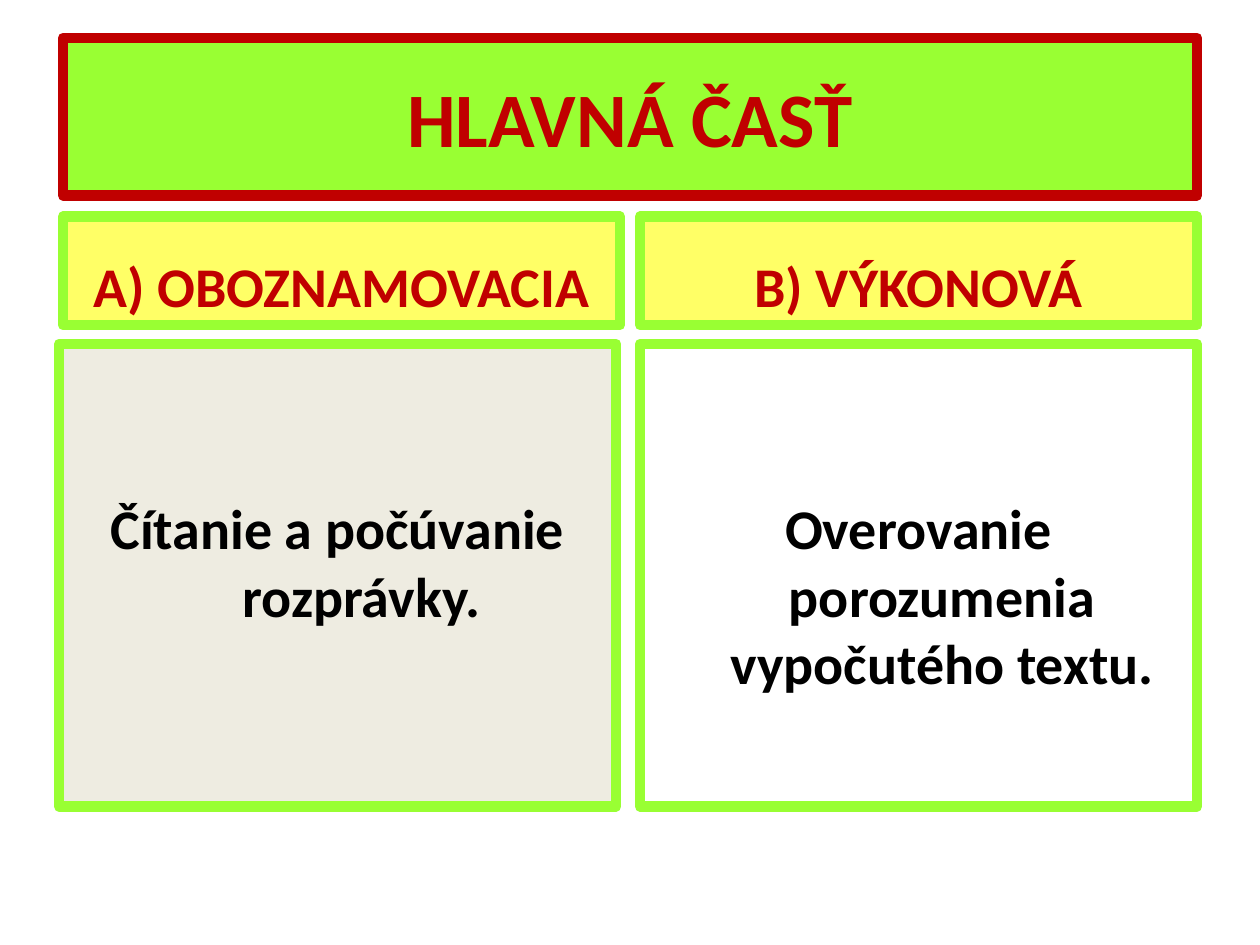
"""Build the two-column comparison slide of the lesson's main part."""
from dataclasses import dataclass

from lxml import etree
from pptx import Presentation
from pptx.dml.color import RGBColor
from pptx.enum import text
from pptx.oxml.ns import qn
from pptx.util import Inches, Pt


@dataclass(frozen=True)
class Theme:
    font: str = "Calibri"
    title_size: int = 44
    text_size: int = 32
    border_width: int = 6
    green: str = "99FF33"
    red: str = "C00000"
    yellow: str = "FFFF66"
    beige: str = "EEECE1"
    white: str = "FFFFFF"
    black: str = "000000"


@dataclass(frozen=True)
class Panel:
    index: int
    wording: str
    left: float
    top: float
    width: float
    height: float
    fill: str
    border: str
    ink: str
    size: int
    anchor: text.MSO_ANCHOR
    top_inset: float = 0.05
    hide_bullet: bool = False


THEME = Theme()
COLUMN_WIDTH = 4.42
HEADING = dict(top=1.72, width=COLUMN_WIDTH, height=0.86, fill=THEME.yellow,
               border=THEME.green, ink=THEME.red, size=THEME.text_size,
               anchor=text.MSO_ANCHOR.BOTTOM)
ACTIVITY = dict(top=2.73, width=COLUMN_WIDTH, height=3.67, border=THEME.green,
                ink=THEME.black, size=THEME.text_size,
                anchor=text.MSO_ANCHOR.TOP, top_inset=1.19, hide_bullet=True)
PANELS = (
    Panel(0, "HLAVNÁ ČASŤ", 0.5, 0.3, 9, 1.25, THEME.green, THEME.red,
          THEME.red, THEME.title_size, text.MSO_ANCHOR.MIDDLE),
    Panel(1, "A) OBOZNAMOVACIA", 0.5, **HEADING),
    Panel(2, "Čítanie a počúvanie rozprávky.", 0.47, fill=THEME.beige, **ACTIVITY),
    Panel(3, "B) VÝKONOVÁ", 5.08, **HEADING),
    Panel(4, "Overovanie porozumenia vypočutého textu.", 5.08,
          fill=THEME.white, **ACTIVITY),
)


def fill_panel(slide, panel: Panel) -> None:
    """Place, colour and word the placeholder that belongs to a panel."""
    holder = next(p for p in slide.placeholders
                  if p.placeholder_format.idx == panel.index)
    holder.left, holder.top = Inches(panel.left), Inches(panel.top)
    holder.width, holder.height = Inches(panel.width), Inches(panel.height)
    holder.fill.solid()
    holder.fill.fore_color.rgb = RGBColor.from_string(panel.fill)
    holder.line.color.rgb = RGBColor.from_string(panel.border)
    holder.line.width = Pt(THEME.border_width)

    frame = holder.text_frame
    frame.text = panel.wording
    frame.word_wrap = True
    frame.auto_size = text.MSO_AUTO_SIZE.NONE
    frame.vertical_anchor = panel.anchor
    frame.margin_top = Inches(panel.top_inset)

    paragraph = frame.paragraphs[0]
    paragraph.alignment = text.PP_ALIGN.CENTER
    paragraph.space_before = Pt(0)
    if panel.hide_bullet:
        etree.SubElement(paragraph._p.get_or_add_pPr(), qn("a:buNone"))
    font = paragraph.runs[0].font
    font.name, font.size, font.bold = THEME.font, Pt(panel.size), True
    font.color.rgb = RGBColor.from_string(panel.ink)


def main() -> None:
    """Create the presentation and save it."""
    presentation = Presentation()
    presentation.slide_width, presentation.slide_height = Inches(10), Inches(7.5)
    comparison = presentation.slide_layouts.get_by_name("Comparison")
    slide = presentation.slides.add_slide(comparison)
    for panel in PANELS:
        fill_panel(slide, panel)
    presentation.save("out.pptx")


if __name__ == "__main__":
    main()
